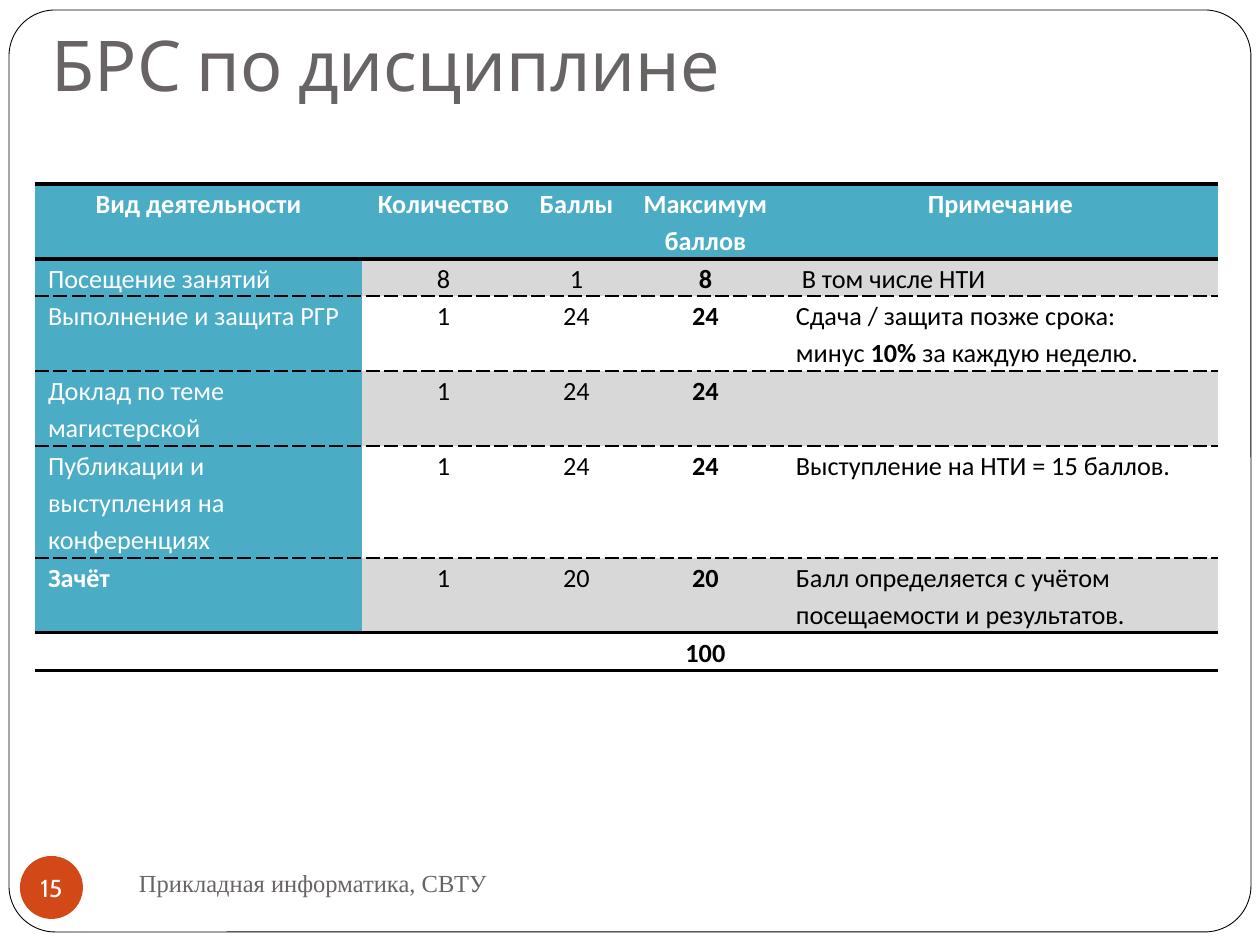
import lxml.etree
import pptx
import pptx.dml.color
import pptx.enum.shapes
import pptx.enum.text
import pptx.oxml.ns
import pptx.util
from dataclasses import dataclass

PX = 914400 / 126


@dataclass(frozen=True)
class Theme:
    white: str = "FFFFFF"
    black: str = "000000"
    gray_text: str = "696464"
    badge: str = "D34817"
    accent: str = "4BACC6"
    band: str = "D8D8D8"
    heading_font: str = "Cabin"
    table_font: str = "Calibri"
    footer_font: str = "Times New Roman"
    title_size: int = 40
    table_size: int = 15
    small_size: int = 14


theme = Theme()
rgb = pptx.dml.color.RGBColor.from_string
qn = pptx.oxml.ns.qn
Align = pptx.enum.text.PP_ALIGN
Anchor = pptx.enum.text.MSO_ANCHOR
Shape = pptx.enum.shapes.MSO_SHAPE


def px(*values):
    return [pptx.util.Emu(round(value * PX)) for value in values]


def style_run(run, font, size, color, bold=False):
    run.font.name = font
    run.font.size = pptx.util.Pt(size)
    run.font.color.rgb = rgb(color)
    run.font.bold = bold


presentation = pptx.Presentation()
presentation.slide_width, presentation.slide_height = px(1260, 945)
slide = presentation.slides.add_slide(presentation.slide_layouts[6])

# Frame and page badge
frame = slide.shapes.add_shape(Shape.ROUNDED_RECTANGLE, *px(9, 10, 1242, 922))
frame.adjustments[0] = 0.05
frame.shadow.inherit = False
frame.fill.solid()
frame.fill.fore_color.rgb = rgb(theme.white)
frame.line.color.rgb = rgb(theme.black)
frame.line.width = pptx.util.Pt(0.5)

badge = slide.shapes.add_shape(Shape.OVAL, *px(20, 856, 63, 63))
badge.shadow.inherit = False
badge.fill.solid()
badge.fill.fore_color.rgb = rgb(theme.badge)
badge.line.fill.background()

# Title, page number and footer
title = slide.shapes.add_textbox(*px(39, 10, 1182, 108))
footer = slide.shapes.add_textbox(*px(126, 851, 573, 63))
texts = [
    (title, "БРС по дисциплине", theme.heading_font, theme.title_size, theme.gray_text,
     Anchor.BOTTOM, Align.LEFT, (13, 6, 13, 13)),
    (badge, "15", theme.heading_font, theme.small_size, theme.white,
     Anchor.MIDDLE, Align.CENTER, (0, 0, 0, 0)),
    (footer, "Прикладная информатика, СВТУ", theme.footer_font, theme.small_size,
     theme.gray_text, Anchor.MIDDLE, Align.LEFT, (13, 6, 13, 6)),
]
for shape, text, font, size, color, anchor, alignment, insets in texts:
    frame_text = shape.text_frame
    frame_text.text = text
    frame_text.word_wrap = shape is not badge
    frame_text.vertical_anchor = anchor
    (frame_text.margin_left, frame_text.margin_top,
     frame_text.margin_right, frame_text.margin_bottom) = px(*insets)
    paragraph = frame_text.paragraphs[0]
    paragraph.alignment = alignment
    style_run(paragraph.runs[0], font, size, color)

# Score table: "*" separates runs, "\v" breaks a line
rows = [
    ("Вид деятельности", "Количество", "Баллы", "Максимум баллов", "Примечание"),
    ("Посещение занятий", "8", "1", "8", "\u00a0В том числе НТИ"),
    ("Выполнение и защита РГР", "1", "24", "24",
     "Сдача / защита позже срока:\vминус *10%* за каждую неделю."),
    ("Доклад по теме магистерской", "1", "24", "24", ""),
    ("Публикации и выступления на конференциях", "1", "24", "24",
     "Выступление на НТИ = 15 баллов."),
    ("Зачёт", "1", "20", "20", "Балл определяется с учётом посещаемости и результатов."),
    ("", "", "", "100", ""),
]
column_widths = [327, 163, 103, 155, 435]
row_heights = [75, 37, 75, 75, 112, 75, 37]
total_row = len(rows) - 1
solid_rules = {0, 1, total_row, total_row + 1}
max_column = 3
bold_words = {"Зачёт", "10%"}

table = slide.shapes.add_table(
    len(rows), len(column_widths),
    *px(35, 184, sum(column_widths), sum(row_heights))).table
table.first_row = False
table.horz_banding = False
for column, width in zip(table.columns, px(*column_widths)):
    column.width = width
for row, height in zip(table.rows, px(*row_heights)):
    row.height = height

for r, row_texts in enumerate(rows):
    for c, text in enumerate(row_texts):
        cell = table.cell(r, c)
        cell.margin_left, cell.margin_top, cell.margin_right, cell.margin_bottom = px(13, 0, 13, 0)

        is_accent = r == 0 or (c == 0 and r < total_row)
        is_band = r % 2 == 1
        cell.fill.solid()
        cell.fill.fore_color.rgb = rgb(
            theme.accent if is_accent else theme.band if is_band else theme.white)

        first, *others = text.split("*")
        paragraph = cell.text_frame.paragraphs[0]
        paragraph.text = first
        for part in others or ([] if first else [""]):
            paragraph.add_run().text = part
        paragraph.line_spacing = 1.15
        paragraph.alignment = Align.CENTER if r == 0 or c in (1, 2, 3) else Align.LEFT
        for run in paragraph.runs:
            style_run(run, theme.table_font, theme.table_size,
                      theme.white if is_accent else theme.black,
                      r == 0 or c == max_column or run.text in bold_words)

        properties = cell._tc.get_or_add_tcPr()
        rules = {"a:lnL": None, "a:lnR": None, "a:lnT": r, "a:lnB": r + 1}
        for position, (tag, rule) in enumerate(rules.items()):
            border = lxml.etree.Element(qn(tag))
            properties.insert(position, border)
            if rule is None:
                lxml.etree.SubElement(border, qn("a:noFill"))
                continue
            is_solid = rule in solid_rules
            border.set("w", str(pptx.util.Pt(2.25 if is_solid else 1)))
            fill = lxml.etree.SubElement(border, qn("a:solidFill"))
            lxml.etree.SubElement(fill, qn("a:srgbClr"), val=theme.black)
            lxml.etree.SubElement(border, qn("a:prstDash"), val="solid" if is_solid else "dash")

presentation.save("out.pptx")
